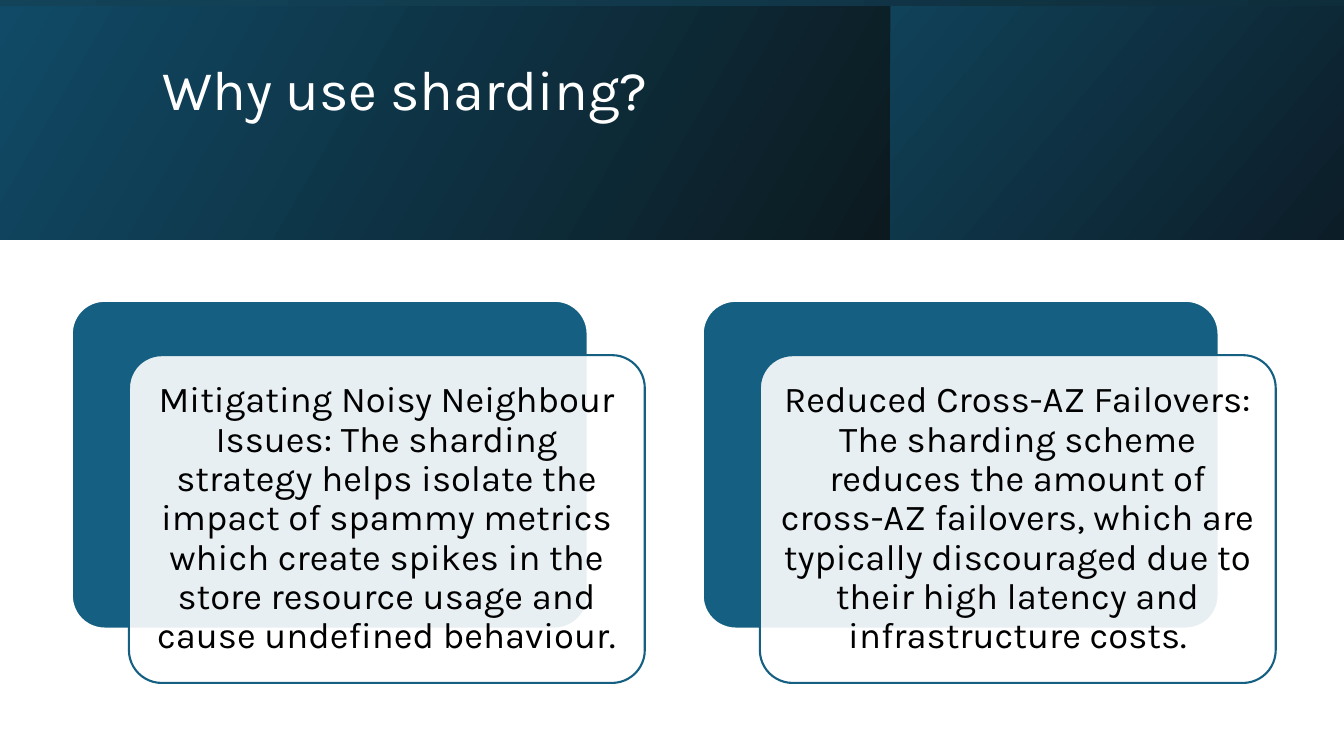
"""Build the slide on the reasons for sharding."""
import pptx
import pptx.dml.color
import pptx.enum.shapes
import pptx.enum.text
import pptx.oxml.ns
import pptx.util
from lxml import etree
from pptx.util import Cm

FONT = "Karla"
COLOURS = {
    "white": "FFFFFF", "black": "000000", "blue": "156082",
    "band_start": "104A66", "band_end": "0C1A20",
    "panel_start": "104259", "panel_end": "0C1D28",
    "strip_start": "124358", "strip_end": "0F2E3C",
}
REASONS = [
    "Mitigating Noisy Neighbour Issues: The sharding strategy helps isolate the "
    "impact of spammy metrics which create spikes in the store resource usage and "
    "cause undefined behaviour.",
    "Reduced Cross-AZ Failovers: The sharding scheme reduces the amount of cross-AZ "
    "failovers, which are typically discouraged due to their high latency and "
    "infrastructure costs.",
]
SLIDE_WIDTH, BAND_WIDTH, HEADER_HEIGHT = 33.87, 22.44, 6.04
CARD_WIDTH, CARD_HEIGHT = 13, 8.26
CARD_LEFT, CARD_TOP, CARD_STEP = 1.81, 7.58, 15.9
FRONT_OFFSET_X, FRONT_OFFSET_Y = 1.44, 1.37


def colour(name):
    """Return the named colour."""
    return pptx.dml.color.RGBColor.from_string(COLOURS[name])


def add_gradient(slide, left, width, height, name, angle):
    """Add a header rectangle with a two-colour gradient."""
    shape = slide.shapes.add_shape(
        pptx.enum.shapes.MSO_SHAPE.RECTANGLE, Cm(left), 0, Cm(width), Cm(height))
    shape.shadow.inherit = False
    shape.line.fill.background()
    shape.fill.gradient()
    shape.fill.gradient_angle = angle
    for stop, end in zip(shape.fill.gradient_stops, ("start", "end")):
        stop.color.rgb = colour(f"{name}_{end}")


def write_text(shape, text, size, colour_name, alignment):
    """Write one paragraph, centred vertically in the shape."""
    frame = shape.text_frame
    frame.word_wrap = True
    frame.vertical_anchor = pptx.enum.text.MSO_ANCHOR.MIDDLE
    paragraph = frame.paragraphs[0]
    paragraph.text = text
    paragraph.alignment = alignment
    paragraph.line_spacing = 0.9
    paragraph.font.name = FONT
    paragraph.font.size = pptx.util.Pt(size)
    paragraph.font.color.rgb = colour(colour_name)


def add_card(slide, left, top, fill_name, line_name):
    """Add one rounded card."""
    card = slide.shapes.add_shape(
        pptx.enum.shapes.MSO_SHAPE.ROUNDED_RECTANGLE,
        Cm(left), Cm(top), Cm(CARD_WIDTH), Cm(CARD_HEIGHT))
    card.adjustments[0] = 0.1
    card.shadow.inherit = False
    card.fill.solid()
    card.fill.fore_color.rgb = colour(fill_name)
    card.line.color.rgb = colour(line_name)
    card.line.width = pptx.util.Pt(1.5)
    return card


def set_opacity(shape, percent):
    """Make the solid fill of a shape partly transparent."""
    qn = pptx.oxml.ns.qn
    fill_colour = shape.fill._xPr.find(qn("a:solidFill")).find(qn("a:srgbClr"))
    etree.SubElement(fill_colour, qn("a:alpha")).set("val", str(percent * 1000))


def add_reason(slide, left, text):
    """Add a blue card with a translucent text card over it."""
    add_card(slide, left, CARD_TOP, "blue", "white")
    front = add_card(slide, left + FRONT_OFFSET_X, CARD_TOP + FRONT_OFFSET_Y,
                     "white", "blue")
    set_opacity(front, 90)
    frame = front.text_frame
    frame.margin_left = frame.margin_right = Cm(0.28)
    frame.margin_top = frame.margin_bottom = Cm(0.28)
    write_text(front, text, 26, "black", pptx.enum.text.PP_ALIGN.CENTER)


def add_header(slide):
    """Add the header gradients and the title."""
    add_gradient(slide, 0, BAND_WIDTH, HEADER_HEIGHT, "band", 330)
    add_gradient(slide, BAND_WIDTH, SLIDE_WIDTH - BAND_WIDTH, HEADER_HEIGHT,
                 "panel", 320)
    add_gradient(slide, 0, SLIDE_WIDTH, 0.16, "strip", 0)
    title = slide.shapes.add_textbox(Cm(3.84), Cm(0.97), Cm(27), Cm(2.7))
    write_text(title, "Why use sharding?", 40, "white",
               pptx.enum.text.PP_ALIGN.LEFT)


def main():
    """Build and save the presentation."""
    presentation = pptx.Presentation()
    presentation.slide_width = Cm(SLIDE_WIDTH)
    presentation.slide_height = Cm(19.05)
    slide = presentation.slides.add_slide(presentation.slide_layouts[6])
    add_header(slide)
    for index, text in enumerate(REASONS):
        add_reason(slide, CARD_LEFT + index * CARD_STEP, text)
    presentation.save("out.pptx")


if __name__ == "__main__":
    main()
